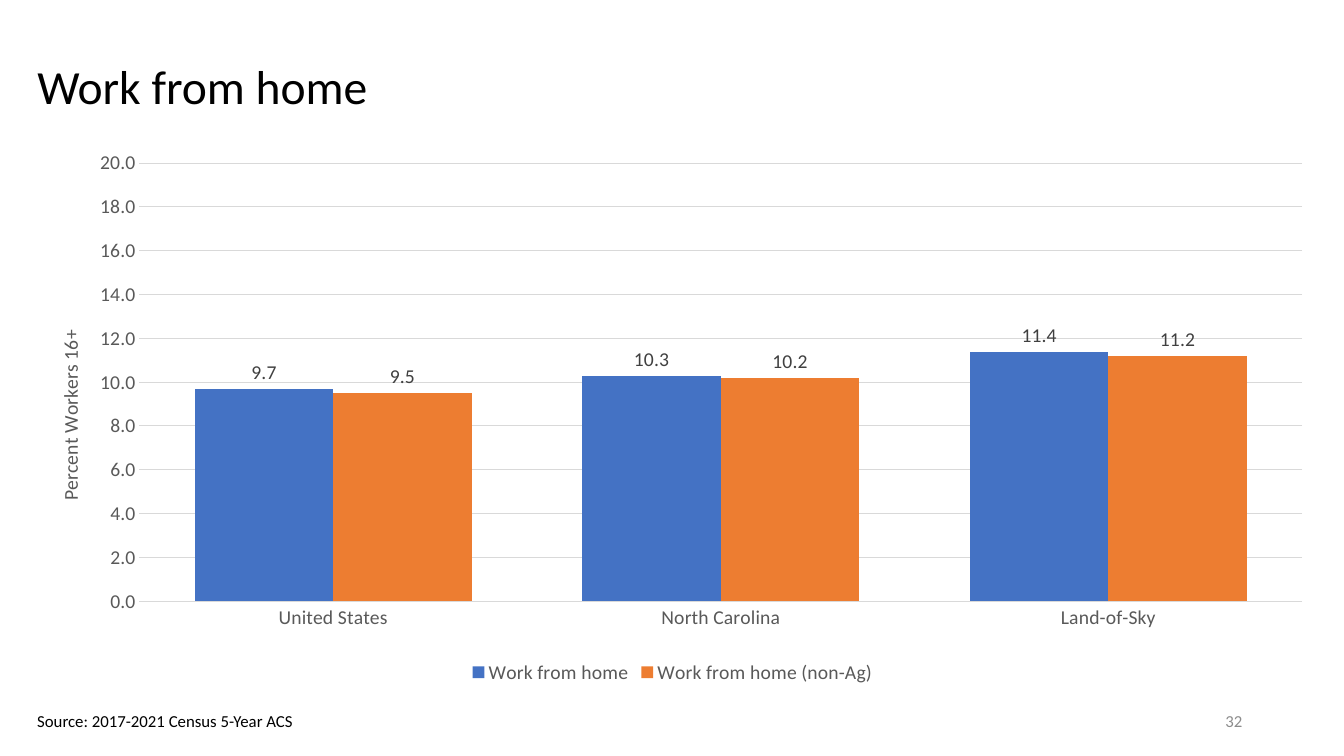
import pptx
import pptx.util
import pptx.oxml
import pptx.oxml.ns
import pptx.chart.data
import pptx.dml.color
import pptx.enum.chart
import pptx.enum.text

Inches = pptx.util.Inches
Pt = pptx.util.Pt
Align = pptx.enum.text.PP_ALIGN
Anchor = pptx.enum.text.MSO_ANCHOR
Tick = pptx.enum.chart.XL_TICK_MARK

HEADING = "Work from home"
SOURCE = "Source: 2017-2021 Census 5-Year ACS"
PAGE = "32"
AXIS_CAPTION = "Percent Workers 16+"
REGIONS = ["United States", "North Carolina", "Land-of-Sky"]
SHARES = [
    ("Work from home", [9.7, 10.3, 11.4], "4472C4"),
    ("Work from home (non-Ag)", [9.5, 10.2, 11.2], "ED7D31"),
]
PLOT_LAYOUT = {"layoutTarget": "inner", "xMode": "edge", "yMode": "edge",
               "x": 0.087, "y": 0.035, "w": 0.901, "h": 0.805}
CAPTION_LAYOUT = {"xMode": "edge", "yMode": "edge", "x": 0.02, "y": 0.335}
GREY, GRID = "595959", "D9D9D9"


def rgb(code):
    return pptx.dml.color.RGBColor.from_string(code)


def style(font, size, color):
    font.name = "Calibri"
    font.size = Pt(size)
    font.bold = False
    font.color.rgb = rgb(color)


def write(frame, text, size=12, color="000000", align=Align.LEFT,
          anchor=Anchor.TOP, wrap=True, spacing=None):
    frame.word_wrap = wrap
    frame.vertical_anchor = anchor
    paragraph = frame.paragraphs[0]
    paragraph.alignment = align
    paragraph.line_spacing = spacing
    run = paragraph.add_run()
    run.text = text
    style(run.font, size, color)


def place(element, position, layout):
    for old in element.findall(pptx.oxml.ns.qn("c:layout")):
        element.remove(old)
    settings = "".join(f'<c:{key} val="{value}"/>' for key, value in layout.items())
    element.insert(position, pptx.oxml.parse_xml(
        f'<c:layout {pptx.oxml.ns.nsdecls("c")}><c:manualLayout>'
        f'{settings}</c:manualLayout></c:layout>'))


def rule(line):
    line.color.rgb = rgb(GRID)
    line.width = Pt(0.75)


def add_shares_chart(slide):
    data = pptx.chart.data.CategoryChartData(number_format="0.0")
    data.categories = REGIONS
    for name, values, _ in SHARES:
        data.add_series(name, values)
    chart = slide.shapes.add_chart(
        pptx.enum.chart.XL_CHART_TYPE.COLUMN_CLUSTERED,
        Inches(0.27), Inches(1.43), Inches(12.8), Inches(5.4), data).chart
    style(chart.font, 14, "000000")
    chart.has_title = False
    chart.has_legend = True
    chart.legend.position = pptx.enum.chart.XL_LEGEND_POSITION.BOTTOM
    chart.legend.include_in_layout = False
    style(chart.legend.font, 14, GREY)

    regions, percent = chart.category_axis, chart.value_axis
    for axis in (regions, percent):
        axis.major_tick_mark = axis.minor_tick_mark = Tick.NONE
        style(axis.tick_labels.font, 14, GREY)
    rule(regions.format.line)
    percent.format.line.fill.background()
    percent.minimum_scale, percent.maximum_scale, percent.major_unit = 0, 20, 2
    percent.tick_labels.number_format = "0.0"
    percent.tick_labels.number_format_is_linked = False
    percent.has_major_gridlines = True
    rule(percent.major_gridlines.format.line)
    write(percent.axis_title.text_frame, AXIS_CAPTION, 14, GREY, Align.CENTER)
    percent.axis_title.text_frame._txBody.bodyPr.set("rot", "-5400000")
    percent.axis_title.text_frame._txBody.bodyPr.set("vert", "horz")
    place(percent.axis_title._element, 1, CAPTION_LAYOUT)
    place(chart._chartSpace.chart.plotArea, 0, PLOT_LAYOUT)

    columns = chart.plots[0]
    columns.gap_width = 80
    columns.overlap = 0
    columns.vary_by_categories = False
    for series, (_, _, color) in zip(columns.series, SHARES):
        series.format.fill.solid()
        series.format.fill.fore_color.rgb = rgb(color)
        labels = series.data_labels
        labels.show_value = True
        labels.number_format = "0.0"
        labels.number_format_is_linked = False
        labels.position = pptx.enum.chart.XL_LABEL_POSITION.OUTSIDE_END
        style(labels.font, 14, "404040")


def main():
    deck = pptx.Presentation()
    deck.slide_width, deck.slide_height = Inches(13.33), Inches(7.5)
    slide = deck.slides.add_slide(deck.slide_layouts[5])
    heading = slide.shapes.title
    heading.left, heading.top = Inches(0.27), Inches(0.34)
    heading.width, heading.height = Inches(12.76), Inches(1.09)
    write(heading.text_frame, HEADING, 34, anchor=Anchor.MIDDLE, spacing=0.9)
    add_shares_chart(slide)
    page = slide.shapes.add_textbox(Inches(9.42), Inches(6.95), Inches(3), Inches(0.4))
    write(page.text_frame, PAGE, 12, "8C8C8C", Align.RIGHT, Anchor.MIDDLE)
    source = slide.shapes.add_textbox(Inches(0.27), Inches(7), Inches(2.78), Inches(0.3))
    write(source.text_frame, SOURCE, wrap=False)
    deck.save("out.pptx")


if __name__ == "__main__":
    main()
